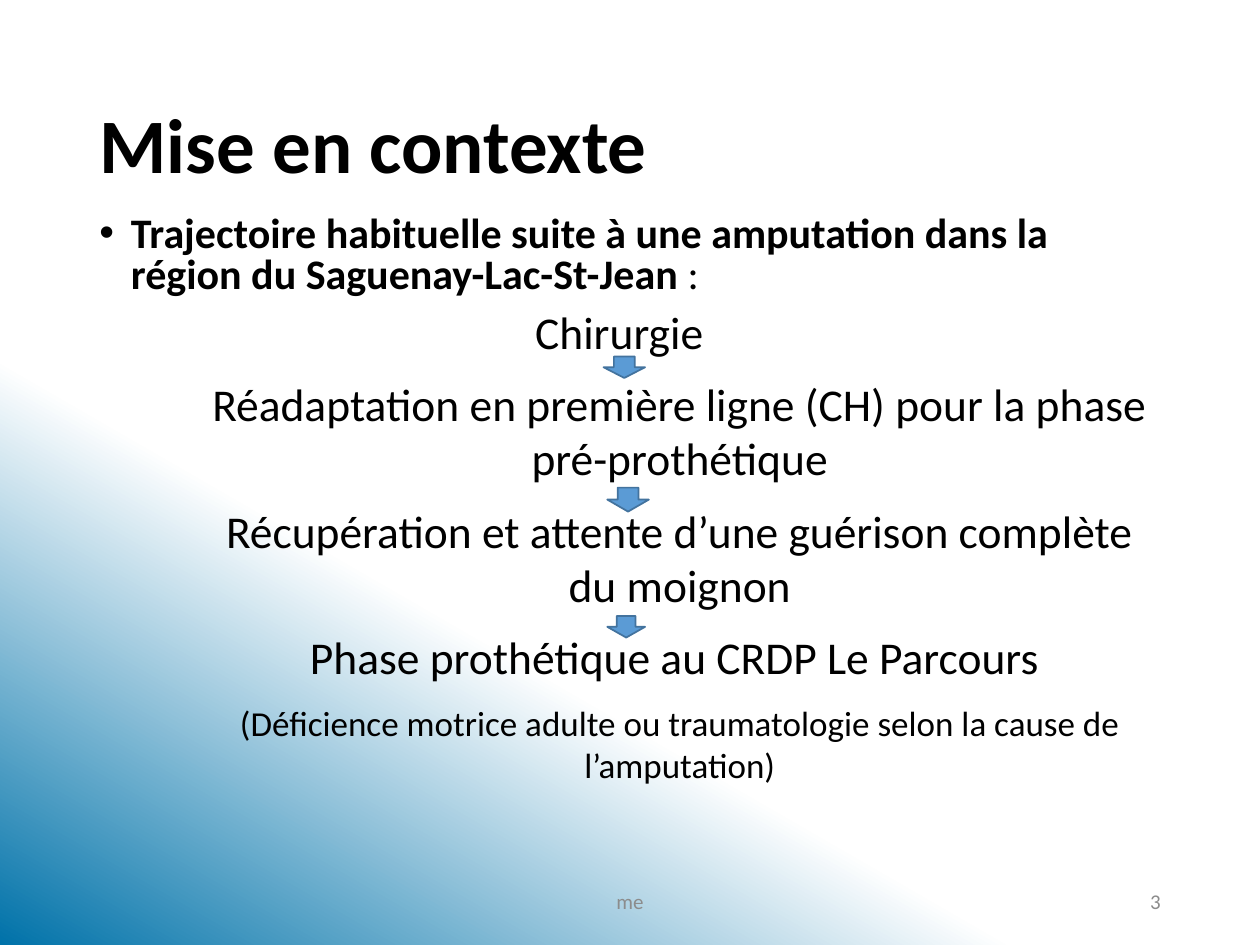
from pptx import Presentation
from pptx.dml.color import RGBColor
from pptx.enum.shapes import MSO_SHAPE
from pptx.enum.text import MSO_ANCHOR, PP_ALIGN
from pptx.oxml.ns import qn
from pptx.util import Inches, Pt
from lxml import etree

LEFT, CENTER, RIGHT = PP_ALIGN.LEFT, PP_ALIGN.CENTER, PP_ALIGN.RIGHT
TOP, MIDDLE = MSO_ANCHOR.TOP, MSO_ANCHOR.MIDDLE
DOWN_ARROW = MSO_SHAPE.DOWN_ARROW
FONT = "Calibri"
BLACK, GREY = "000000", "8C8C8C"

TITLE = "Mise en contexte"
LEAD = "Trajectoire habituelle suite à une amputation dans la région du Saguenay-Lac-St-Jean "
# text, size, line spacing, left margin, right margin
STEPS = [
    ("Chirurgie", 26, 0.8, 0, 0.17),
    ("Réadaptation en première ligne (CH) pour la phase pré-prothétique", 26, 1, 0.79, 0),
    ("Récupération et attente d’une guérison complète du moignon", 26, 1, 0.79, 0),
    ("Phase prothétique au CRDP Le Parcours", 26, 1, 0.79, 0.08),
    ("(Déficience motrice adulte ou traumatologie selon la cause de l’amputation)",
     20, 1, 0.79, 0),
]
# left, top, width, height
ARROWS = [(4.79, 2.83, 0.33, 0.17), (4.82, 3.87, 0.33, 0.19), (4.82, 4.89, 0.3, 0.17)]
# text, left, width, alignment
FOOTERS = [("3", 7.06, 2.25, RIGHT), ("me", 3.31, 3.38, CENTER)]
GRADIENT = [(0.65, "FFFFFF"), (1, "0072A9")]


def color(value):
    return RGBColor.from_string(value)


def add_box(left, top, width, height, anchor):
    box = page.shapes.add_textbox(Inches(left), Inches(top), Inches(width), Inches(height))
    frame = box.text_frame
    frame.word_wrap = True
    frame.vertical_anchor = anchor
    return frame


def style(para, size, ink=BLACK, bold=False, align=LEFT, spacing=1.0, before=0):
    para.font.name, para.font.size, para.font.bold = FONT, Pt(size), bold
    para.font.color.rgb = color(ink)
    para.alignment, para.line_spacing, para.space_before = align, spacing, Pt(before)


def set_margins(para, left, right=0, indent=0):
    props = para._p.get_or_add_pPr()
    for name, value in (("marL", left), ("marR", right), ("indent", indent)):
        props.set(name, str(Inches(value)))
    return props


deck = Presentation()
deck.slide_width, deck.slide_height = Inches(10), Inches(7.5)
page = deck.slides.add_slide(deck.slide_layouts[6])

# Background: white to blue, towards the lower left
backdrop = page.background.fill
backdrop.gradient()
backdrop.gradient_angle = 240  # counter-clockwise
for stop, (position, value) in zip(backdrop.gradient_stops, GRADIENT):
    stop.position = position
    stop.color.rgb = color(value)

# Title
para = add_box(0.69, 0.45, 8.62, 1.45, MIDDLE).paragraphs[0]
para.text = TITLE
style(para, 44, bold=True, spacing=0.9)

# Lead bullet, then the centred steps
body = add_box(0.69, 1.67, 8.62, 5, TOP)
para = body.paragraphs[0]
para.add_run().text = LEAD
colon = para.add_run()
colon.text = ":"
style(para, 24, bold=True, spacing=0.8, before=10)
colon.font.bold = False
props = set_margins(para, 0.25, indent=-0.25)
bullet_font = etree.Element(qn("a:buFont"), typeface="Arial")
bullet = etree.Element(qn("a:buChar"), char="•")
run_defaults = props.find(qn("a:defRPr"))
run_defaults.addprevious(bullet_font)
run_defaults.addprevious(bullet)

for text, size, spacing, left, right in STEPS:
    para = body.add_paragraph()
    para.text = text
    style(para, size, align=CENTER, spacing=spacing, before=10)
    set_margins(para, left, right)

# Arrows between the steps
for place in ARROWS:
    arrow = page.shapes.add_shape(DOWN_ARROW, *map(Inches, place))
    arrow.shadow.inherit = False
    arrow.fill.solid()
    arrow.fill.fore_color.rgb = color("5B9BD5")
    arrow.line.color.rgb = color("43739E")
    arrow.line.width = Pt(1)

# Page number and footer
for text, left, width, align in FOOTERS:
    para = add_box(left, 6.95, width, 0.4, MIDDLE).paragraphs[0]
    para.text = text
    style(para, 12, GREY, align=align)

deck.save("out.pptx")
